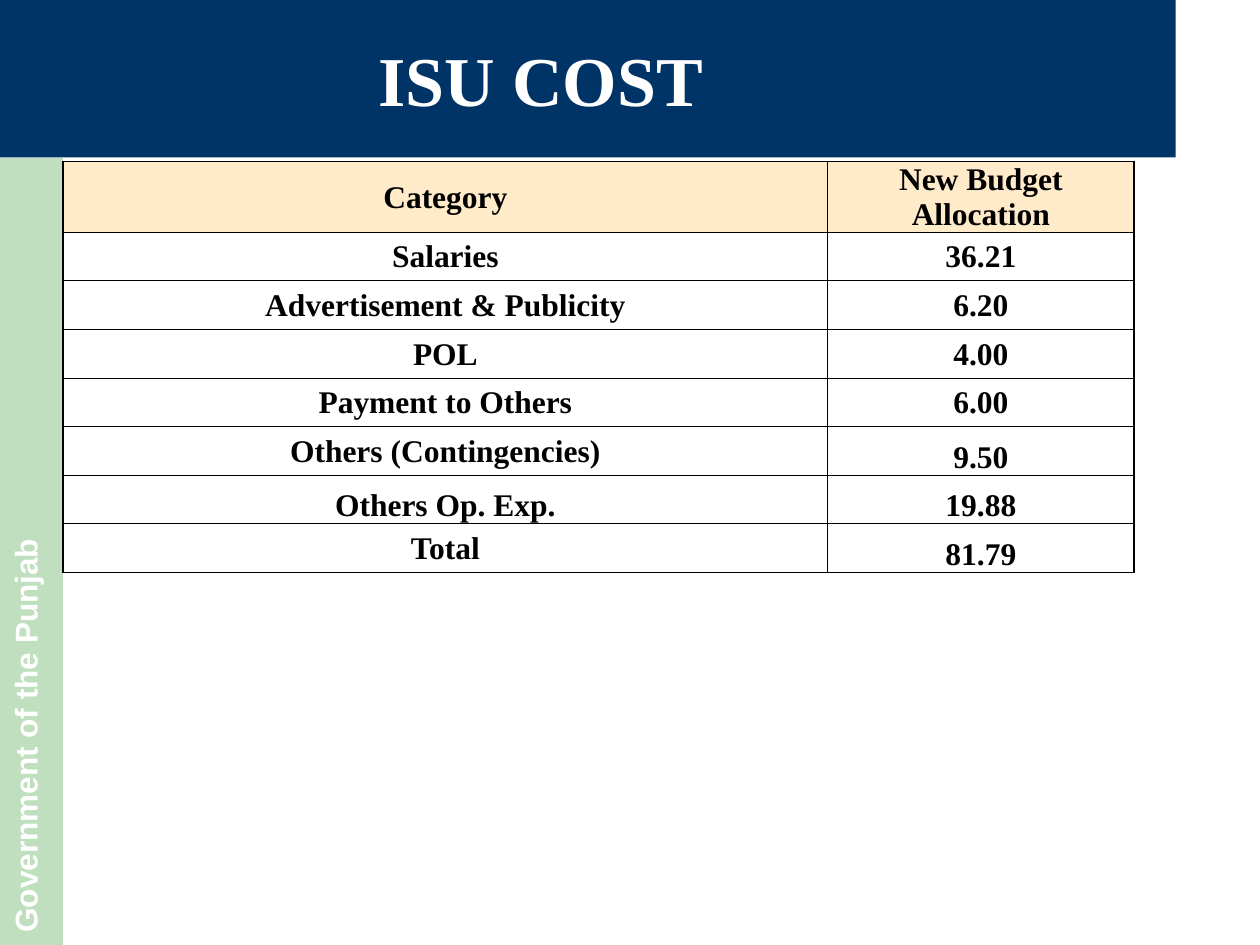
from lxml import etree
from pptx import Presentation
from pptx.dml.color import RGBColor
from pptx.enum.shapes import MSO_SHAPE as Shape
from pptx.enum.text import MSO_ANCHOR as Anchor, PP_ALIGN as Align
from pptx.oxml.ns import qn
from pptx.util import Inches, Pt

NAVY = RGBColor(0x00, 0x33, 0x66)
GREEN = RGBColor(0x00, 0x80, 0x00)
CREAM = RGBColor(0xFF, 0xEA, 0xCA)
WHITE = RGBColor(0xFF, 0xFF, 0xFF)
BLACK = RGBColor(0x00, 0x00, 0x00)

HEADER = ("Category", "New Budget Allocation")
COSTS = [
    ("Salaries", "36.21"),
    ("Advertisement & Publicity", "6.20"),
    ("POL", "4.00"),
    ("Payment to Others", "6.00"),
    ("Others (Contingencies)", "9.50"),
    ("Others Op. Exp.", "19.88"),
    ("Total", "81.79"),
]
BOTTOM_ANCHORED = {(5, 1), (6, 0), (6, 1), (7, 1)}


class SlideBuilder:
    serif = "Times New Roman"
    sans = "Arial"
    body_size = 18
    title_size = 40
    thin, thick = 0.5, 1

    def __init__(self, slide):
        self.slide = slide

    def set_text(self, text_frame, text, font_name, size, color, align=Align.CENTER):
        text_frame.text = text
        paragraph = text_frame.paragraphs[0]
        paragraph.alignment = align
        font = paragraph.runs[0].font
        font.name, font.size, font.bold = font_name, Pt(size), True
        font.color.rgb = color

    def panel(self, left, top, width, height, color, opacity=100):
        shape = self.slide.shapes.add_shape(
            Shape.RECTANGLE, Inches(left), Inches(top), Inches(width), Inches(height))
        shape.shadow.inherit = False
        shape.line.fill.background()
        shape.fill.solid()
        shape.fill.fore_color.rgb = color
        if opacity < 100:
            color_element = next(shape.element.spPr.iter(qn("a:srgbClr")))
            etree.SubElement(color_element, qn("a:alpha"), val=str(opacity * 1000))
        return shape

    def title(self, shape, text):
        shape.text_frame.vertical_anchor = Anchor.MIDDLE
        self.set_text(shape.text_frame, text, self.serif, self.title_size, WHITE)

    def side_label(self, shape, text):
        frame = shape.text_frame
        frame.vertical_anchor = Anchor.TOP
        # Text runs upward from the foot of the panel
        shape.element.txBody.find(qn("a:bodyPr")).set("vert", "vert270")
        self.set_text(frame, text, self.sans, self.body_size, WHITE, Align.LEFT)

    def borders(self, cell, widths):
        properties = cell._tc.get_or_add_tcPr()
        for position, (side, width) in enumerate(widths.items()):
            line = etree.Element(qn(f"a:ln{side}"), w=str(Pt(width)))
            fill = etree.SubElement(line, qn("a:solidFill"))
            etree.SubElement(fill, qn("a:srgbClr"), val=str(BLACK))
            properties.insert(position, line)

    def table(self, left, top, column_widths, header_height, row_height, rows):
        height = header_height + row_height * (len(rows) - 1)
        table = self.slide.shapes.add_table(
            len(rows), len(column_widths), Inches(left), Inches(top),
            Inches(sum(column_widths)), Inches(height)).table
        for column, width in zip(table.columns, column_widths):
            column.width = Inches(width)
        last_row, last_column = len(rows) - 1, len(column_widths) - 1
        for r, values in enumerate(rows):
            table.rows[r].height = Inches(row_height if r else header_height)
            for c, text in enumerate(values):
                cell = table.cell(r, c)
                cell.margin_left = cell.margin_right = cell.margin_top = Inches(0.01)
                cell.margin_bottom = 0
                cell.vertical_anchor = (
                    Anchor.BOTTOM if (r, c) in BOTTOM_ANCHORED else Anchor.MIDDLE)
                self.set_text(cell.text_frame, text, self.serif, self.body_size, BLACK)
                if r == 0:
                    cell.fill.solid()
                    cell.fill.fore_color.rgb = CREAM
                else:
                    cell.fill.background()
                outer = {"L": c == 0, "R": c == last_column,
                         "T": r == 0, "B": r == last_row}
                self.borders(cell, {side: self.thick if edge else self.thin
                                    for side, edge in outer.items()})


def main():
    presentation = Presentation()
    presentation.slide_width, presentation.slide_height = Inches(10), Inches(7.5)
    builder = SlideBuilder(presentation.slides.add_slide(presentation.slide_layouts[6]))

    # Header corner and side band
    builder.panel(8.58, 0, 0.75, 1.25, NAVY)
    side_band = builder.panel(0, 1.25, 0.5, 6.25, GREEN, opacity=25)
    builder.side_label(side_band, "Government of the Punjab")

    # Title
    builder.title(builder.panel(0, 0, 8.58, 1.25, NAVY), "ISU COST")

    # Cost table
    builder.table(0.5, 1.28, (6.07, 2.43), 0.56, 2.7 / len(COSTS), [HEADER] + COSTS)

    presentation.save("out.pptx")


if __name__ == "__main__":
    main()
